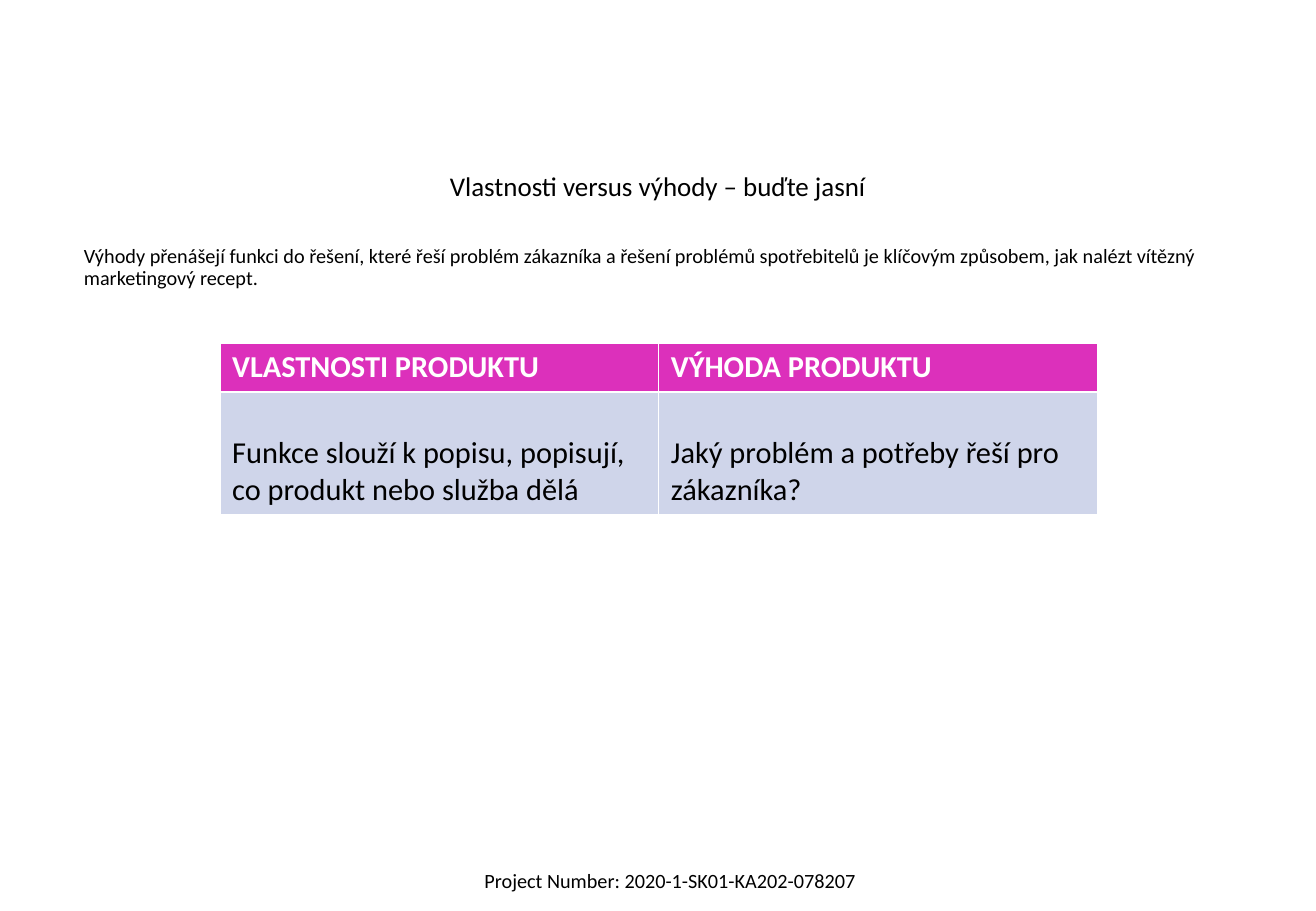
from pptx import Presentation
from pptx.dml.color import RGBColor as RGB
from pptx.enum.text import MSO_ANCHOR as ANCHOR, MSO_AUTO_SIZE as AUTO, PP_ALIGN as ALIGN
from pptx.oxml.ns import qn
from pptx.util import Cm, Pt
from lxml import etree

COLORS = {"black": "000000", "white": "FFFFFF", "header": "DC30BB", "cell": "CFD5EA"}


def write(p, text, size, color="black", bold=False):
    r = p.add_run()
    r.text = text
    for name, value in {"name": "Calibri", "size": Pt(size), "bold": bold}.items():
        setattr(r.font, name, value)
    r.font.color.rgb = RGB.from_string(COLORS[color])


prs = Presentation()
prs.slide_width, prs.slide_height = Cm(27.51), Cm(19.05)
s = prs.slides.add_slide(prs.slide_layouts[1])
title = s.shapes.title
title.element.getparent().remove(title.element)

# Heading and introduction
body = s.placeholders[1]
body.left, body.top, body.width, body.height = Cm(1.5), Cm(3.5), Cm(24.5), Cm(13.5)
tf = body.text_frame
tf.auto_size = AUTO.NONE
paragraphs = [
    ("Vlastnosti versus výhody – buďte jasní", 16, ALIGN.CENTER, 0),
    ("Výhody přenášejí funkci do řešení, které řeší problém zákazníka a řešení problémů "
     "spotřebitelů je klíčovým způsobem, jak nalézt vítězný marketingový recept.",
     12, ALIGN.LEFT, 26),
]
for i, (text, size, align, before) in enumerate(paragraphs):
    p = tf.add_paragraph() if i else tf.paragraphs[0]
    pPr = p._p.get_or_add_pPr()
    pPr.set("marL", "0")
    pPr.set("indent", "0")
    etree.SubElement(pPr, qn("a:buNone"))
    formats = {"alignment": align, "line_spacing": 0.9, "space_before": Pt(before)}
    for name, value in formats.items():
        setattr(p, name, value)
    write(p, text, size)

# Table of features and benefits
rows = [
    ("VLASTNOSTI PRODUKTU", "VÝHODA PRODUKTU"),
    ("Funkce slouží k popisu, popisují, co produkt nebo služba dělá",
     "Jaký problém a potřeby řeší pro zákazníka?"),
]
styles = [("header", "white", True), ("cell", "black", False)]
heights = [Cm(1.03), Cm(2.57)]
table = s.shapes.add_table(2, 2, Cm(4.6), Cm(7.17), Cm(18.34), sum(heights)).table
for i, (texts, (fill, color, bold)) in enumerate(zip(rows, styles)):
    table.rows[i].height = heights[i]
    for j, text in enumerate(texts):
        cell = table.cell(i, j)
        cell.fill.solid()
        cell.fill.fore_color.rgb = RGB.from_string(COLORS[fill])
        cell.vertical_anchor = ANCHOR.BOTTOM
        write(cell.text_frame.paragraphs[0], text, 18, color, bold)

# Project number
sp = s.shapes.add_textbox(Cm(9.5), Cm(18.03), Cm(9.02), Cm(0.77))
sp.text_frame.word_wrap = False
p = sp.text_frame.paragraphs[0]
p.alignment = ALIGN.CENTER
write(p, "Project Number: 2020-1-SK01-KA202-078207", 12)

prs.save("out.pptx")
